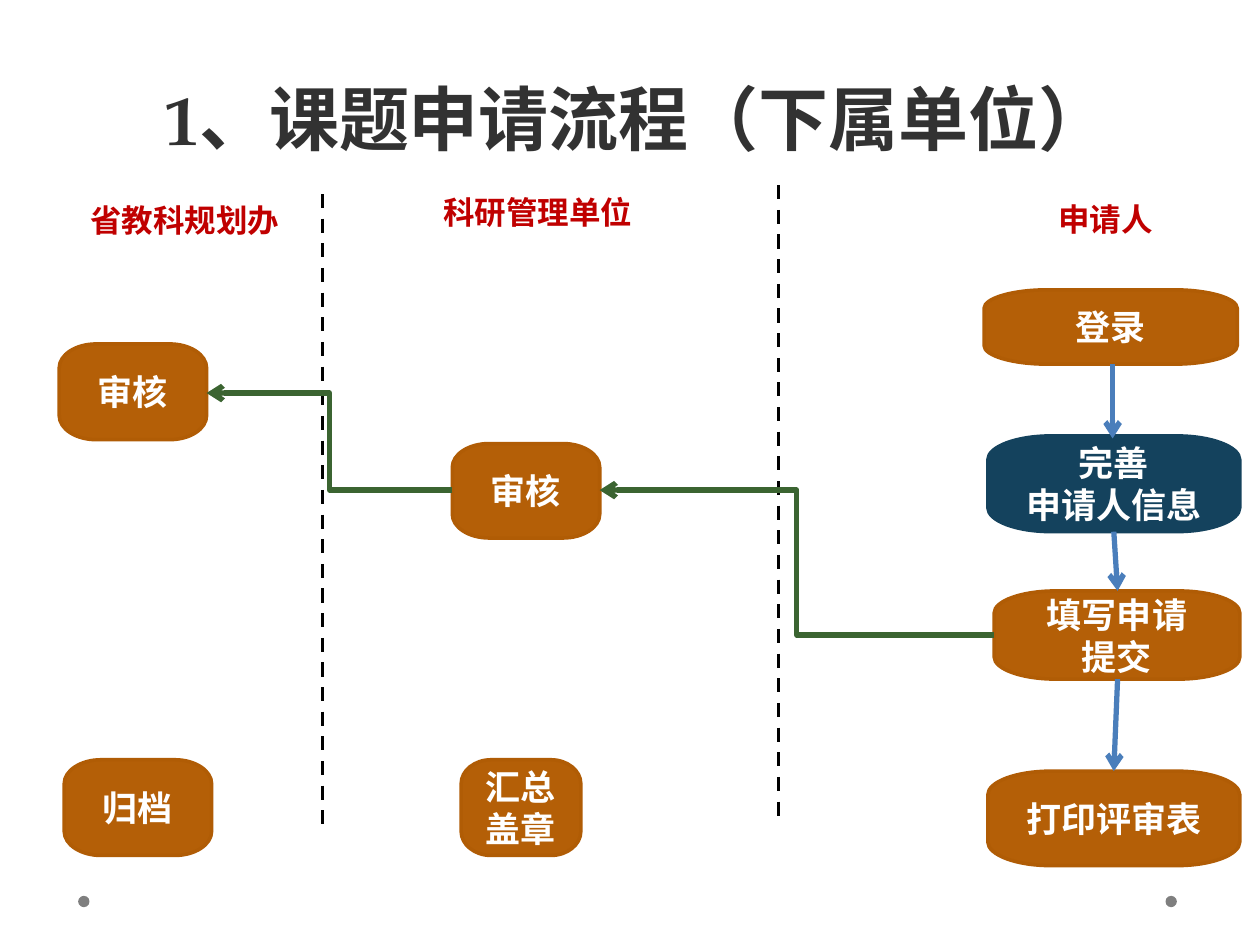
"""Build the project application flow slide with three swimlanes."""
from lxml.etree import SubElement
from pptx import Presentation
from pptx.dml.color import RGBColor
from pptx.enum.dml import MSO_LINE
from pptx.enum.shapes import MSO_CONNECTOR, MSO_SHAPE
from pptx.enum.text import MSO_ANCHOR, MSO_AUTO_SIZE, PP_ALIGN
from pptx.oxml.ns import qn
from pptx.util import Inches, Pt

THEME = {
    "title": "323232", "lane": "C00000", "label": "FFFFFF", "divider": "000000",
    "step": "B45F07", "step_edge": "B05C05", "active": "14425D",
    "down": "4A7EBB", "across": "3B6431", "dot": "7F7F7F",
    "serif": "TeX Gyre Pagella", "sans": "Calibri",
    "title_size": 40, "lane_size": 18, "label_size": 20,
}

TITLE = "1、课题申请流程（下属单位）"
LANES = [
    ("省教科规划办", 0.62, 1.55, 1.73),
    ("科研管理单位", 3.42, 1.48, 1.73),
    ("申请人", 8.3, 1.54, 0.96),
]
DIVIDERS = [(2.56, 1.54, 6.62), (6.18, 1.47, 6.54)]
STEPS = [
    ("完善\n申请人信息", 7.84, 3.46, 2, 0.76),
    ("填写申请\n提交", 7.89, 4.69, 1.95, 0.7),
    ("打印评审表", 7.84, 6.12, 2, 0.75),
    ("登录", 7.81, 2.3, 2.01, 0.59),
    ("审核", 3.59, 3.52, 1.17, 0.75),
    ("审核", 0.47, 2.73, 1.17, 0.76),
    ("汇总盖章", 3.66, 6.03, 0.95, 0.76),
    ("归档", 0.51, 6.03, 1.17, 0.76),
]
ACTIVE_LABEL = "完善\n申请人信息"
DOWN_FLOWS = [
    ((8.83, 2.89), (8.83, 3.48)),
    ((8.84, 4.22), (8.87, 4.69)),
    ((8.87, 5.39), (8.84, 6.12)),
]
ACROSS_FLOWS = [((7.89, 5.04), (4.76, 3.89)), ((3.59, 3.89), (1.64, 3.12))]
DOT_LEFTS = [0.62, 9.25]
DOT_TOP, DOT_SIZE = 7.11, 0.09
CORNER_SHARE, ARC_PULL = 0.25, 0.55


def color(key):
    return RGBColor.from_string(THEME[key])


def style_text(frame, font, size, ink, align=PP_ALIGN.LEFT):
    for paragraph in frame.paragraphs:
        paragraph.alignment = align
        for run in paragraph.runs:
            run.font.name = THEME[font]
            run.font.size = Pt(THEME[size])
            run.font.bold = True
            run.font.color.rgb = color(ink)


def add_title(slide):
    title = slide.shapes.title
    title.left, title.top = Inches(0.55), Inches(0.24)
    title.width, title.height = Inches(9), Inches(0.97)
    frame = title.text_frame
    frame.text = TITLE
    frame.auto_size = MSO_AUTO_SIZE.NONE
    frame.vertical_anchor = MSO_ANCHOR.BOTTOM
    frame.paragraphs[0].line_spacing = 0.06
    style_text(frame, "serif", "title_size", "title", PP_ALIGN.CENTER)


def add_lane(slide, name, left, top, width):
    lane = slide.shapes.add_textbox(Inches(left), Inches(top), Inches(width), Inches(0.4))
    lane.text_frame.word_wrap = False
    lane.text_frame.text = name
    style_text(lane.text_frame, "sans", "lane_size", "lane")


def round_corners(step, outline, corners):
    left, top = outline[0][0], outline[2][1]
    segments = list(step._element.iter(qn("a:lnTo")))
    for index, corner in enumerate(corners):
        start, end = outline[2 * index], outline[(2 * index + 1)]
        controls = [
            tuple(p + ARC_PULL * (c - p) for p, c in zip(point, corner)) for point in (start, end)]
        curve = segments[2 * index]
        curve.tag = qn("a:cubicBezTo")
        curve.remove(curve[0])
        for x, y in (*controls, end):
            SubElement(curve, qn("a:pt"), x=str(round(x - left)), y=str(round(y - top)))


def add_step(slide, label, *bounds):
    left, top, width, height = (Inches(value) for value in bounds)
    right, bottom = left + width, top + height
    rx, ry = round(width * CORNER_SHARE), round(height * CORNER_SHARE)
    outline = [
        (left, top + ry), (left + rx, top), (right - rx, top), (right, top + ry),
        (right, bottom - ry), (right - rx, bottom), (left + rx, bottom), (left, bottom - ry)]
    builder = slide.shapes.build_freeform(*outline[0])
    builder.add_line_segments(outline[1:], close=True)
    step = builder.convert_to_shape()
    round_corners(step, outline, [(left, top), (right, top), (right, bottom), (left, bottom)])
    step.shadow.inherit = False
    active = label == ACTIVE_LABEL
    step.fill.solid()
    step.fill.fore_color.rgb = color("active" if active else "step")
    step.line.color.rgb = color("active" if active else "step_edge")
    step.line.width = Pt(2)
    frame = step.text_frame
    frame.word_wrap = True
    frame.vertical_anchor = MSO_ANCHOR.MIDDLE
    frame.text = label
    style_text(frame, "serif", "label_size", "label", PP_ALIGN.CENTER)


def add_line(slide, kind, start, end, ink, width):
    line = slide.shapes.add_connector(kind, *(Inches(value) for value in (*start, *end)))
    line.line.color.rgb = color(ink)
    line.line.width = Pt(width)
    SubElement(line._element.spPr, qn("a:effectLst"))
    return line


def add_flow(slide, kind, start, end, ink):
    flow = add_line(slide, kind, start, end, ink, 3)
    SubElement(flow.line._get_or_add_ln(), qn("a:tailEnd"), type="arrow")


def add_dot(slide, left):
    dot = slide.shapes.add_shape(
        MSO_SHAPE.OVAL, Inches(left), Inches(DOT_TOP), Inches(DOT_SIZE), Inches(DOT_SIZE))
    dot.shadow.inherit = False
    dot.fill.solid()
    dot.fill.fore_color.rgb = color("dot")
    dot.line.fill.background()


def main():
    deck = Presentation()
    deck.slide_width, deck.slide_height = Inches(10), Inches(7.5)
    slide = deck.slides.add_slide(deck.slide_layouts[5])
    add_title(slide)
    for left in DOT_LEFTS:
        add_dot(slide, left)
    for x, top, bottom in DIVIDERS:
        divider = add_line(slide, MSO_CONNECTOR.STRAIGHT, (x, top), (x, bottom), "divider", 2)
        divider.line.dash_style = MSO_LINE.DASH
    for lane in LANES:
        add_lane(slide, *lane)
    for step in STEPS:
        add_step(slide, *step)
    for start, end in DOWN_FLOWS:
        add_flow(slide, MSO_CONNECTOR.STRAIGHT, start, end, "down")
    for start, end in ACROSS_FLOWS:
        add_flow(slide, MSO_CONNECTOR.ELBOW, start, end, "across")
    deck.save("out.pptx")


if __name__ == "__main__":
    main()
